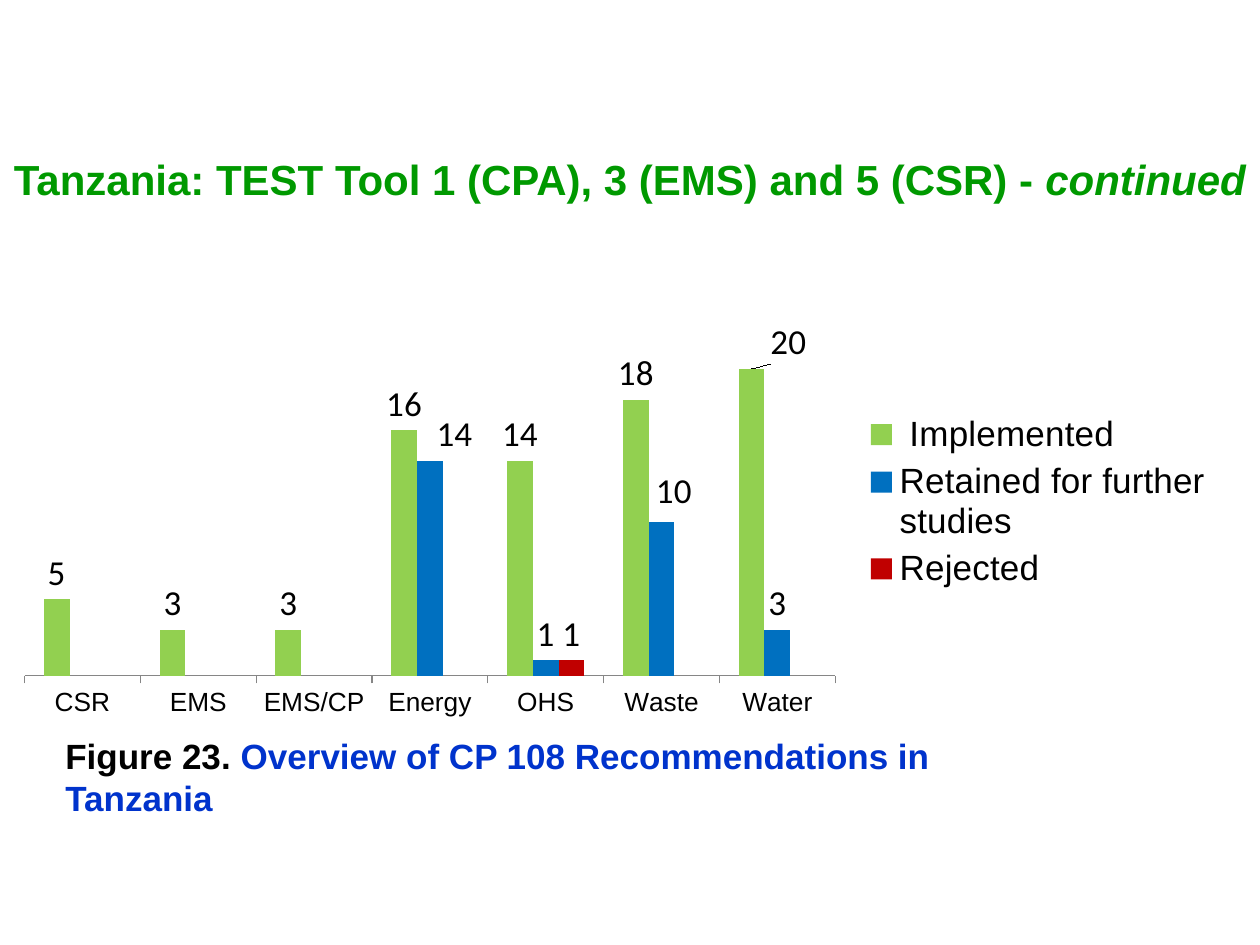
from lxml import etree
from pptx import Presentation
from pptx import util as u
from pptx.chart.data import CategoryChartData
from pptx.dml.color import RGBColor
from pptx.enum import chart as ch, text
from pptx.oxml.ns import qn

W, H = 10, 7.5
CATEGORIES = ["CSR", "EMS", "EMS/CP", "Energy", "OHS", "Waste", "Water"]
SERIES = [
    (" Implemented", [5, 3, 3, 16, 14, 18, 20], "92D050", {6: (0.03, 0)}),
    ("Retained for further studies", [None, None, None, 14, 1, 10, 3], "0070C0",
     {3: (0.02, 0), 5: (0.01, -0.01)}),
    ("Rejected", [None, None, None, None, 1, None, None], "C00000", {}),
]


def color(value):
    """Turn a hex string into a colour."""
    return RGBColor.from_string(value)


def set_font(font, size, name="Arial", rgb="000000", bold=None):
    """Set size, typeface, colour and weight of a font."""
    font.size, font.name, font.bold = u.Pt(size), name, bold
    font.color.rgb = color(rgb)


def add_text(s, box, runs, size, align, anchor, bottom=0.05):
    """Add a bold one-paragraph text box from (text, colour, italic) runs."""
    sp = s.shapes.add_textbox(*(u.Inches(v) for v in box))
    tf = sp.text_frame
    tf.word_wrap = True
    tf.vertical_anchor = anchor
    tf.margin_bottom = u.Inches(bottom)
    p = tf.paragraphs[0]
    p.alignment = align
    set_font(p.font, size, bold=True)
    for words, rgb, italic in runs:
        r = p.add_run()
        r.text = words
        r.font.color.rgb = color(rgb)
        r.font.italic = italic


def make_layout(**values):
    """Build a manual chart layout element."""
    layout = etree.Element(qn("c:layout"))
    manual = etree.SubElement(layout, qn("c:manualLayout"))
    for key, value in values.items():
        etree.SubElement(manual, qn("c:" + key)).set("val", str(value))
    return layout


def place(parent, layout, index):
    """Put a layout into a chart element in place of its old one."""
    for old in parent.findall(qn("c:layout")):
        parent.remove(old)
    parent.insert(index, layout)


def style_series(series, rgb, shifts):
    """Colour a series, label its bars and shift single labels."""
    series.format.fill.solid()
    series.format.fill.fore_color.rgb = color(rgb)
    series.invert_if_negative = False
    labels = series.data_labels
    labels.show_value = True
    labels.position = ch.XL_LABEL_POSITION.OUTSIDE_END
    set_font(labels.font, 20, "Calibri")
    for index, (x, y) in shifts.items():
        label = series.points[index].data_label
        label.position = ch.XL_LABEL_POSITION.OUTSIDE_END
        set_font(label.font, 20, "Calibri")
        element = labels._element.find(f"{qn('c:dLbl')}[{list(shifts).index(index) + 1}]")
        place(element, make_layout(x=x, y=y), 1)


def style_axes(chart):
    """Show a plain category axis and hide the value axis."""
    axis = chart.category_axis
    axis.major_tick_mark = ch.XL_TICK_MARK.OUTSIDE
    axis.format.line.color.rgb = color("868686")
    set_font(axis.tick_labels.font, 15)
    values = chart.value_axis
    values.minimum_scale, values.maximum_scale = 0, 25
    values.has_major_gridlines = False
    values.visible = False


def add_bars(s, box):
    """Add the clustered column chart with its legend."""
    data = CategoryChartData()
    data.categories = CATEGORIES
    for name, values, _, _ in SERIES:
        data.add_series(name, values)
    frame = s.shapes.add_chart(ch.XL_CHART_TYPE.COLUMN_CLUSTERED,
                               *(u.Inches(v) for v in box), data)
    chart = frame.chart
    chart.has_title = False
    set_font(chart.font, 10, "Calibri")
    plot = chart.plots[0]
    plot.gap_width, plot.overlap, plot.vary_by_categories = 150, 0, False
    for series, (_, _, rgb, shifts) in zip(plot.series, SERIES):
        style_series(series, rgb, shifts)
    style_axes(chart)
    chart.has_legend = True
    legend = chart.legend
    legend.position = ch.XL_LEGEND_POSITION.RIGHT
    legend.include_in_layout = False
    set_font(legend.font, 20)
    edges = {"xMode": "edge", "yMode": "edge"}
    place(legend._element, make_layout(**edges, x=0.7, y=0.28, w=0.29, h=0.43), 1)
    area = chart._chartSpace.chart.plotArea
    place(area, make_layout(layoutTarget="inner", **edges, x=0.02, y=0.02, w=0.66, h=0.87), 0)


def main():
    """Build the slide and save it."""
    prs = Presentation()
    prs.slide_width, prs.slide_height = u.Inches(W), u.Inches(H)
    s = prs.slides.add_slide(prs.slide_layouts[6])
    add_text(s, (0, 1.17, W, H / 10),
             [("Tanzania: TEST Tool 1 (CPA), 3 (EMS) and 5 (CSR) - ", "009900", None),
              ("continued", "009900", True)],
             24, text.PP_ALIGN.CENTER, text.MSO_ANCHOR.TOP)
    add_bars(s, (0, H * 0.3, W * 0.975, 3.5))
    add_text(s, (0.42, H * 0.8, 8.29, 0.89),
             [("Figure 23.", "000000", None),
              (" Overview of CP 108 Recommendations in Tanzania", "0033CC", None)],
             20, text.PP_ALIGN.LEFT, text.MSO_ANCHOR.MIDDLE, bottom=0.62)
    prs.save("out.pptx")


if __name__ == "__main__":
    main()
